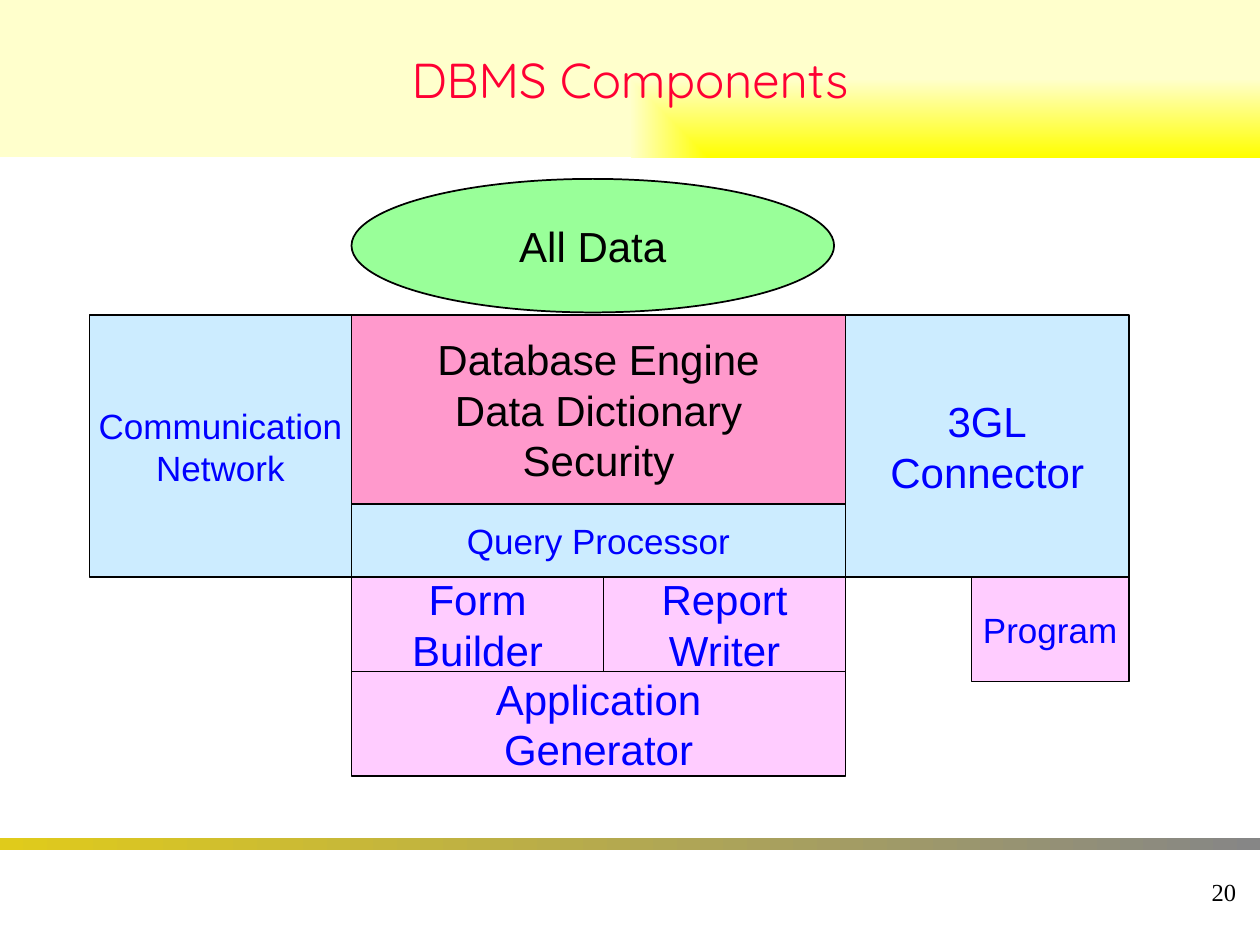
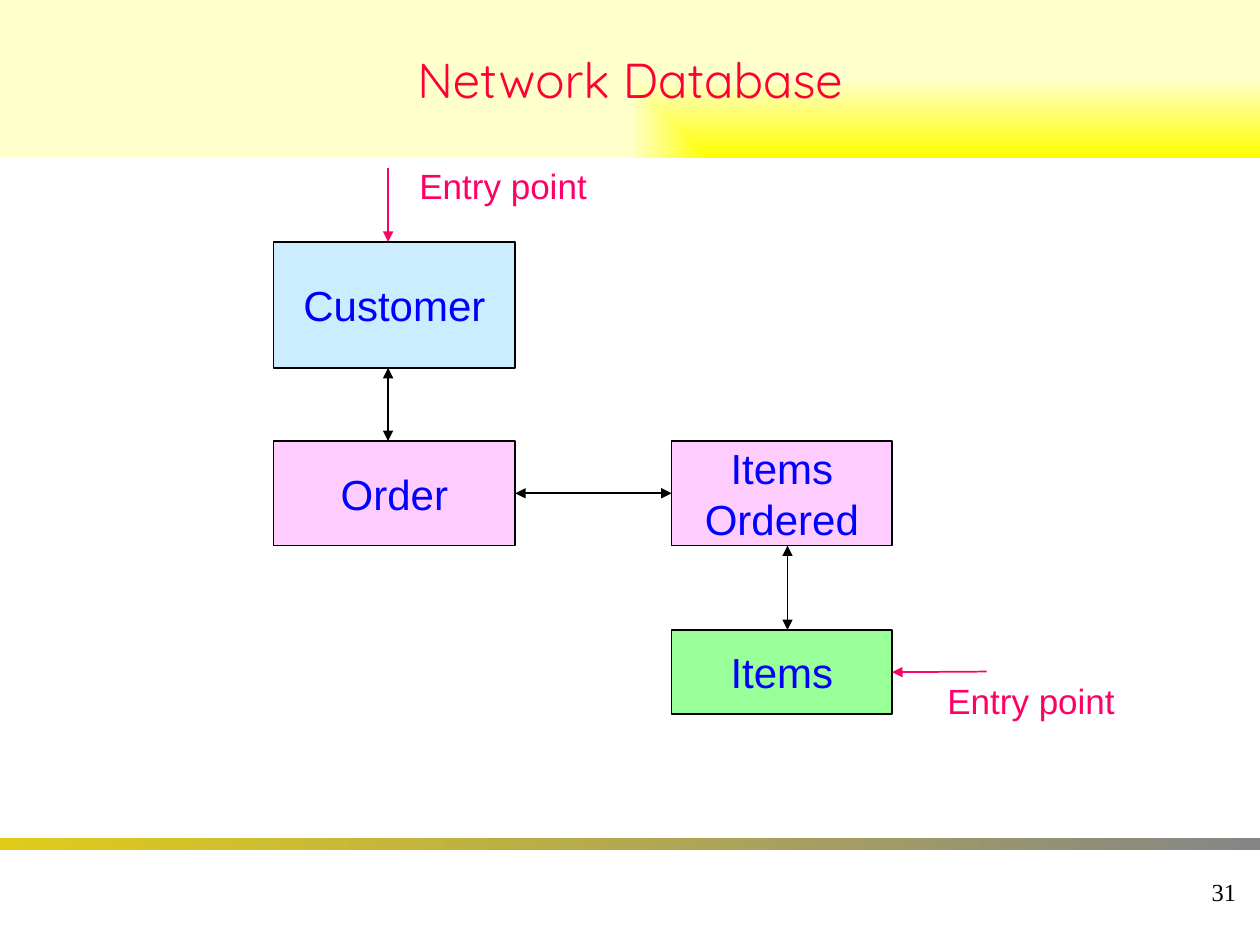
from lxml import etree
from pptx import Presentation
from pptx.dml.color import RGBColor
from pptx.enum import shapes, text
from pptx.oxml import ns
from pptx.util import Inches, Pt

BLACK = RGBColor(0x00, 0x00, 0x00)
BLUE = RGBColor(0x00, 0x00, 0xFF)
RED = RGBColor(0xFF, 0x00, 0x33)
CRIMSON = RGBColor(0xFF, 0x00, 0x66)
YELLOW = RGBColor(0xFF, 0xFF, 0x00)
CREAM = RGBColor(0xFF, 0xFF, 0xCC)
GOLD = RGBColor(0xE0, 0xCB, 0x1B)
GREY = RGBColor(0x86, 0x86, 0x86)
GREEN = RGBColor(0x99, 0xFF, 0x99)
ROSE = RGBColor(0xFF, 0x99, 0xCC)
SKY = RGBColor(0xCC, 0xEC, 0xFF)
PINK = RGBColor(0xFF, 0xCC, 0xFF)

RECTANGLE = shapes.MSO_SHAPE.RECTANGLE
OVAL = shapes.MSO_SHAPE.OVAL
LEFT, CENTER, RIGHT = text.PP_ALIGN.LEFT, text.PP_ALIGN.CENTER, text.PP_ALIGN.RIGHT
TOP_SIDE, LEFT_SIDE, BOTTOM_SIDE, RIGHT_SIDE = range(4)


def write(shape, words, size, color, font="Arial", align=CENTER, wrap=False,
          anchor=text.MSO_ANCHOR.MIDDLE):
    frame = shape.text_frame
    frame.text = words
    frame.word_wrap = wrap
    frame.vertical_anchor = anchor
    for paragraph in frame.paragraphs:
        paragraph.alignment = align
        paragraph.font.name = font
        paragraph.font.size = Pt(size)
        paragraph.font.color.rgb = color


def add_plain_shape(slide, box, kind=RECTANGLE):
    shape = slide.shapes.add_shape(kind, *map(Inches, box))
    shape.shadow.inherit = False
    return shape


def add_block(slide, box, words, fill, size=24, color=BLUE, kind=RECTANGLE):
    shape = add_plain_shape(slide, box, kind)
    shape.fill.solid()
    shape.fill.fore_color.rgb = fill
    shape.line.color.rgb = BLACK
    shape.line.width = Pt(1)
    write(shape, words, size, color)
    return shape


def add_gradient_band(slide, box, start, end):
    band = add_plain_shape(slide, box)
    band.line.fill.background()
    band.fill.gradient()
    band.fill.gradient_angle = 0
    for stop, color, position in zip(band.fill.gradient_stops, (start, end), (0, 1)):
        stop.color.rgb = color
        stop.position = position
    return band


def add_label(slide, box, words, size, color, **style):
    label = slide.shapes.add_textbox(*map(Inches, box))
    write(label, words, size, color, **style)


def add_arrow(slide, start, end, color=BLACK, both=True):
    arrow = slide.shapes.add_connector(
        shapes.MSO_CONNECTOR.STRAIGHT, *map(Inches, (*start, *end)))
    arrow.line.color.rgb = color
    arrow.line.width = Pt(1)
    line = arrow.line._get_or_add_ln()
    for tag in ("a:headEnd", "a:tailEnd") if both else ("a:tailEnd",):
        etree.SubElement(line, ns.qn(tag), type="triangle")
    etree.SubElement(arrow._element.spPr, ns.qn("a:effectLst"))
    return arrow


def add_title(slide, box, words):
    band = add_gradient_band(slide, box, YELLOW, CREAM)
    linear = band._element.spPr.find(".//" + ns.qn("a:lin"))
    corner = etree.Element(ns.qn("a:path"))
    corner.set("path", "rect")
    etree.SubElement(corner, ns.qn("a:fillToRect"), l="100000", t="100000")
    linear.getparent().replace(linear, corner)
    write(band, words, 28, RED, font="Quicksand", wrap=True)


def add_footer(slide, box, number):
    left, top, width, height = box
    add_gradient_band(slide, (left, top, width, 0.1), GOLD, GREY)
    add_label(slide, (left + width - 2.17, top + 0.18, 2.08, 0.5), number, 14, BLACK,
              font="Times New Roman", align=RIGHT)


def start_slide(presentation, title, number):
    slide = presentation.slides.add_slide(presentation.slide_layouts[6])
    add_footer(slide, (0, 6.65, 10, 0.85), number)
    add_title(slide, (0, 0, 10, 1.25), title)
    return slide


def draw_components(slide, origin):
    left, top = origin
    network, engine, report, connector, program, end = (
        left + offset for offset in (0, 2.08, 4.08, 6, 7, 8.25))
    core, query, builders, generator, bottom = (
        top + offset for offset in (1.08, 2.58, 3.16, 3.91, 4.74))
    add_block(slide, (engine, top, 3.83, 1.06), "All Data", GREEN, color=BLACK, kind=OVAL)
    blocks = [
        (engine, core, connector, query,
         "Database Engine\nData Dictionary\nSecurity", ROSE, 24, BLACK),
        (engine, query, connector, builders, "Query Processor", SKY, 20, BLUE),
        (engine, builders, report, generator, "Form\nBuilder", PINK, 24, BLUE),
        (report, builders, connector, generator, "Report\nWriter", PINK, 24, BLUE),
        (network, core, engine, builders, "Communication\nNetwork", SKY, 20, BLUE),
        (connector, core, end, builders, "3GL\nConnector", SKY, 24, BLUE),
        (program, builders, end, builders + 0.83, "Program", PINK, 20, BLUE),
        (engine, generator, connector, bottom, "Application\nGenerator", PINK, 24, BLUE),
    ]
    for x, y, right, lower, words, fill, size, color in blocks:
        add_block(slide, (x, y, right - x, lower - y), words, fill, size, color)


def draw_network(slide, origin):
    left, top = origin
    second = left + 3.16
    customer_top, order_top, items_top = (top + offset for offset in (0.66, 2.24, 3.74))
    add_block(slide, (left, customer_top, 1.92, 1), "Customer", SKY)
    order = add_block(slide, (left, order_top, 1.92, 0.83), "Order", PINK)
    ordered = add_block(slide, (second, order_top, 1.75, 0.83), "Items\nOrdered", PINK)
    items = add_block(slide, (second, items_top, 1.75, 0.67), "Items", GREEN)

    order_axis, items_axis = left + 0.91, second + 0.92
    order_middle, items_middle = order_top + 0.42, items_top + 0.33
    add_arrow(slide, (order_axis, customer_top + 1), (order_axis, order_top))
    link = add_arrow(slide, (left + 1.92, order_middle), (second, order_middle))
    link.begin_connect(order, RIGHT_SIDE)
    link.end_connect(ordered, LEFT_SIDE)
    add_arrow(slide, (items_axis, items_top), (items_axis, order_top + 0.83))

    add_arrow(slide, (order_axis, top + 0.07), (order_axis, customer_top), CRIMSON, both=False)
    entry = add_arrow(slide, (second + 2.5, items_middle), (second + 1.75, items_middle),
                      CRIMSON, both=False)
    entry.end_connect(items, RIGHT_SIDE)
    for x, y in ((left + 1.06, top), (second + 2.09, items_middle + 0.01)):
        add_label(slide, (x, y, 1.53, 0.43), "Entry point", 20, CRIMSON,
                  align=LEFT, anchor=text.MSO_ANCHOR.TOP)


def main():
    presentation = Presentation()
    presentation.slide_width = Inches(10)
    presentation.slide_height = Inches(7.5)
    draw_components(start_slide(presentation, "DBMS Components", "20"), (0.71, 1.42))
    draw_network(start_slide(presentation, "Network Database", "31"), (2.17, 1.26))
    presentation.save("out.pptx")


if __name__ == "__main__":
    main()
